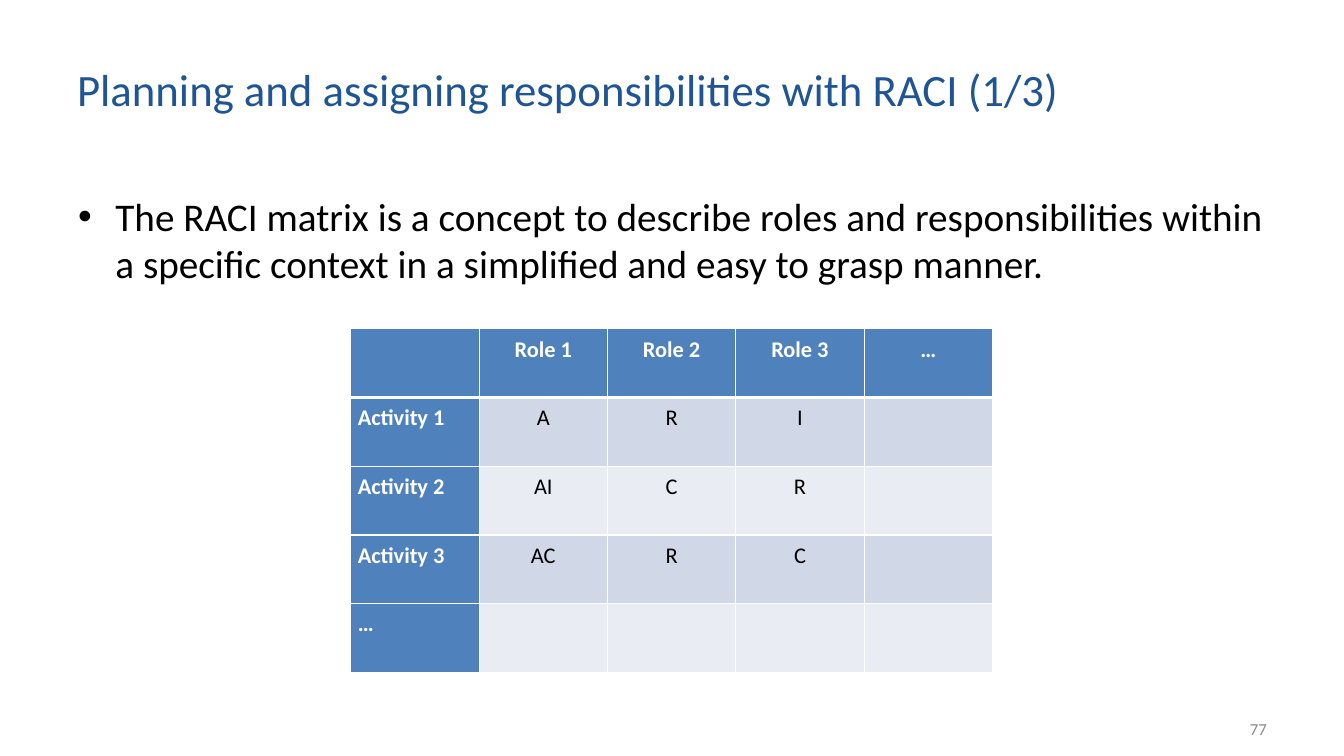
from dataclasses import dataclass

from lxml.etree import SubElement
from pptx import Presentation
from pptx.dml.color import RGBColor
from pptx.enum.text import MSO_ANCHOR, PP_ALIGN
from pptx.oxml.ns import qn
from pptx.slide import Slide
from pptx.table import _Cell
from pptx.text.text import TextFrame
from pptx.util import Inches, Pt

SLIDE_WIDTH, SLIDE_HEIGHT = Inches(13.33), Inches(7.5)
GRID_COLUMNS, GRID_ROWS = 40, 25

FONT = "Calibri"
WHITE, BLACK = "FFFFFF", "000000"
TITLE_BLUE, HEADER_BLUE, PAGE_GRAY = "205595", "4F81BD", "8C8C8C"
BAND_FILLS = ("D0D8E7", "E9ECF3")
THIN_BORDER, HEADER_BORDER = 0.96, 3

RACI_MATRIX = (
    ("", "Role 1", "Role 2", "Role 3", "…"),
    ("Activity 1", "A", "R", "I", ""),
    ("Activity 2", "AI", "C", "R", ""),
    ("Activity 3", "AC", "R", "C", ""),
    ("…", "", "", "", ""),
)


@dataclass(frozen=True)
class Area:
    """A rectangle measured in grid columns and rows."""
    column: float
    row: float
    columns: float
    rows: float

    def lengths(self) -> tuple[int, int, int, int]:
        column_width = SLIDE_WIDTH / GRID_COLUMNS
        row_height = SLIDE_HEIGHT / GRID_ROWS
        return (round(self.column * column_width), round(self.row * row_height),
                round(self.columns * column_width), round(self.rows * row_height))


@dataclass(frozen=True)
class TextBlock:
    text: str
    area: Area
    size: float
    color: str
    anchor: MSO_ANCHOR = MSO_ANCHOR.MIDDLE
    align: PP_ALIGN = PP_ALIGN.LEFT
    bullet: bool = False


TEXT_BLOCKS = (
    TextBlock("Planning and assigning responsibilities with RACI (1/3)",
              Area(2, 1, 31.17, 3.83), 32, TITLE_BLUE),
    TextBlock("The RACI matrix is a concept to describe roles and responsibilities "
              "within a specific context in a simplified and easy to grasp manner.",
              Area(2, 6.2, 36, 16.87), 28, BLACK, anchor=MSO_ANCHOR.TOP, bullet=True),
    TextBlock("77", Area(28.67, 23.43, 9.33, 1.33), 12, PAGE_GRAY, align=PP_ALIGN.RIGHT),
)
TABLE_AREA = Area(10.44, 10.87, 19.1, 11.37)


def rgb(color: str) -> RGBColor:
    return RGBColor.from_string(color)


def write_text(frame: TextFrame, text: str, *, size: float, color: str,
               bold: bool = False, align: PP_ALIGN = PP_ALIGN.LEFT,
               line_spacing: float = 1.0, bullet: bool = False) -> None:
    frame.word_wrap = True
    paragraph = frame.paragraphs[0]
    if bullet:
        properties = paragraph._p.get_or_add_pPr()
        properties.set("marL", str(Inches(0.38)))
        properties.set("indent", str(Inches(-0.37)))
        SubElement(properties, qn("a:buFont"), typeface="Arial")
        SubElement(properties, qn("a:buChar"), char="•")
    paragraph.alignment = align
    paragraph.line_spacing = line_spacing
    if text:
        font = paragraph.add_run().font
        paragraph.runs[0].text = text
    else:
        font = paragraph.font
    font.name, font.size, font.bold = FONT, Pt(size), bold
    font.color.rgb = rgb(color)


def add_text_block(slide: Slide, block: TextBlock) -> None:
    frame = slide.shapes.add_textbox(*block.area.lengths()).text_frame
    frame.vertical_anchor = block.anchor
    write_text(frame, block.text, size=block.size, color=block.color,
               align=block.align, bullet=block.bullet)


def set_borders(cell: _Cell, top: float, bottom: float) -> None:
    """Draw white borders; call before the fill, which follows them in the XML."""
    properties = cell._tc.get_or_add_tcPr()
    widths = {"L": THIN_BORDER, "R": THIN_BORDER, "T": top, "B": bottom}
    for side, width in widths.items():
        line = SubElement(properties, qn(f"a:ln{side}"), w=str(Pt(width)))
        SubElement(SubElement(line, qn("a:solidFill")), qn("a:srgbClr"), val=WHITE)


def style_cell(cell: _Cell, text: str, row: int, column: int) -> None:
    is_heading = row == 0 or column == 0
    set_borders(cell,
                top=HEADER_BORDER if row == 1 else THIN_BORDER,
                bottom=HEADER_BORDER if row == 0 else THIN_BORDER)
    cell.fill.solid()
    cell.fill.fore_color.rgb = rgb(HEADER_BLUE if is_heading else BAND_FILLS[(row - 1) % 2])
    cell.margin_left = cell.margin_right = Inches(0.07)
    cell.margin_top = cell.margin_bottom = Inches(0.05)
    write_text(cell.text_frame, text, size=16, bold=is_heading,
               color=WHITE if is_heading else BLACK, line_spacing=1.07,
               align=PP_ALIGN.CENTER if column else PP_ALIGN.JUSTIFY)


def add_raci_table(slide: Slide) -> None:
    table = slide.shapes.add_table(len(RACI_MATRIX), len(RACI_MATRIX[0]),
                                   *TABLE_AREA.lengths()).table
    table.first_row = table.horz_banding = False
    for row, texts in enumerate(RACI_MATRIX):
        for column, text in enumerate(texts):
            style_cell(table.cell(row, column), text, row, column)


def main() -> None:
    presentation = Presentation()
    presentation.slide_width, presentation.slide_height = SLIDE_WIDTH, SLIDE_HEIGHT
    slide = presentation.slides.add_slide(presentation.slide_layouts[6])
    for block in TEXT_BLOCKS:
        add_text_block(slide, block)
    add_raci_table(slide)
    presentation.save("out.pptx")


if __name__ == "__main__":
    main()
